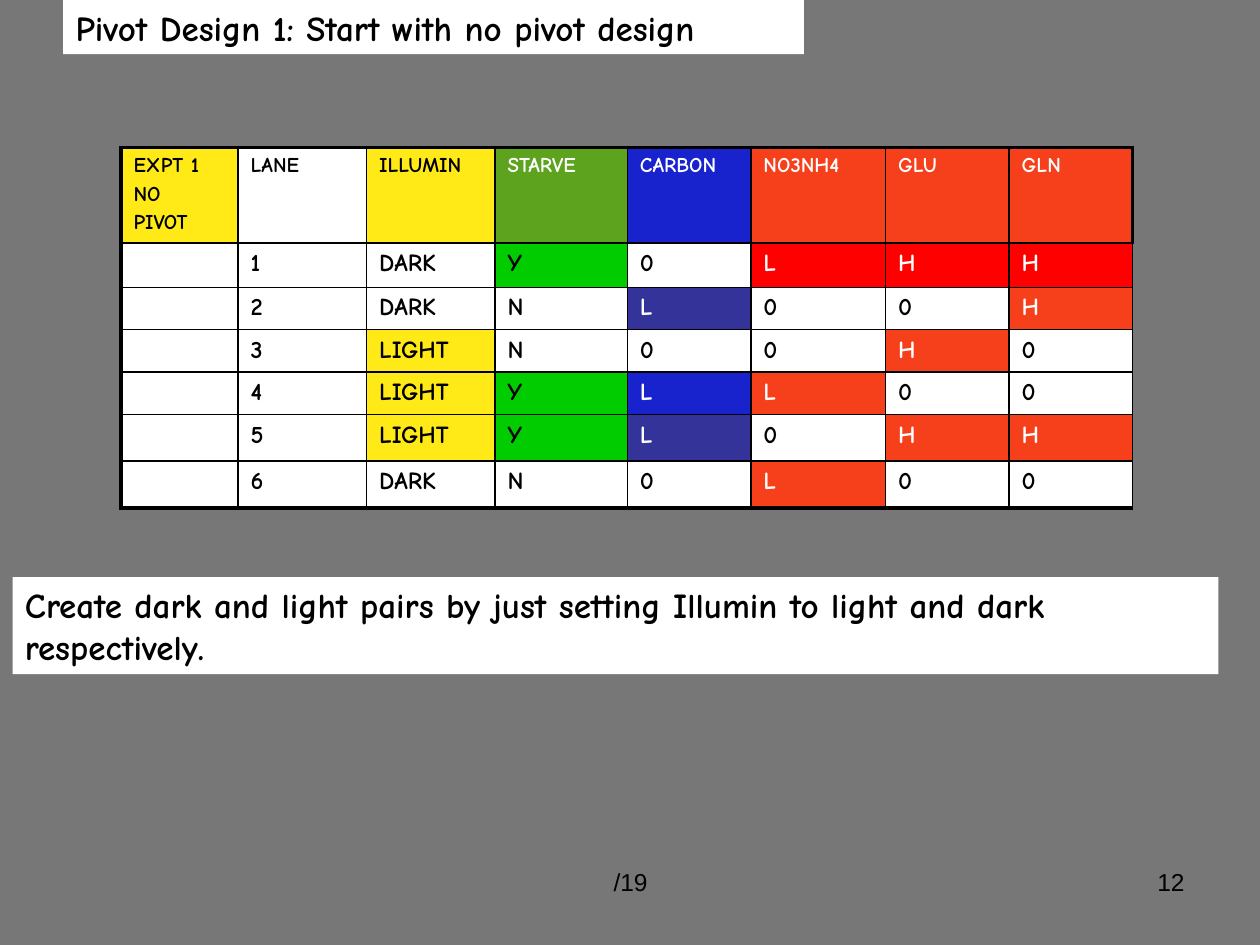
from lxml.etree import SubElement
from pptx import Presentation
from pptx.dml.color import RGBColor
from pptx.enum.text import MSO_ANCHOR, PP_ALIGN
from pptx.oxml.ns import qn
from pptx.util import Inches, Pt

BLACK = RGBColor(0x00, 0x00, 0x00)
WHITE = RGBColor(0xFF, 0xFF, 0xFF)
GREY = RGBColor(0x77, 0x77, 0x77)
YELLOW = RGBColor(0xFF, 0xEA, 0x18)
OLIVE = RGBColor(0x5D, 0xA3, 0x1E)
GREEN = RGBColor(0x00, 0xCC, 0x00)
BLUE = RGBColor(0x18, 0x22, 0xCD)
INDIGO = RGBColor(0x33, 0x33, 0x99)
ORANGE = RGBColor(0xF6, 0x3F, 0x1B)
RED = RGBColor(0xFF, 0x00, 0x00)

FILLS = {"W": WHITE, "Y": YELLOW, "O": OLIVE, "G": GREEN,
         "B": BLUE, "I": INDIGO, "F": ORANGE, "R": RED}
LIGHT_TEXT_FILLS = "OBIFR"


def write(frame, text, size, color, font="Comic Neue", bold=True, align=PP_ALIGN.LEFT):
    frame.text = text
    for para in frame.paragraphs:
        para.alignment = align
        for span in para.runs:
            span.font.name = font
            span.font.size = Pt(size)
            span.font.bold = bold
            span.font.color.rgb = color


def add_border(cell, side, width):
    """Draw one black cell edge; side is L, R, T or B, in that order."""
    line = SubElement(cell._tc.get_or_add_tcPr(), qn(f"a:ln{side}"), w=str(Pt(width)))
    fill = SubElement(line, qn("a:solidFill"))
    SubElement(fill, qn("a:srgbClr"), val=str(BLACK))


deck = Presentation()
deck.slide_width = Inches(10)
deck.slide_height = Inches(7.5)
slide = deck.slides.add_slide(deck.slide_layouts[5])
slide.background.fill.solid()
slide.background.fill.fore_color.rgb = GREY

# Experiment table: texts and fill codes, row by row
ROWS = [
    (["EXPT 1\nNO\nPIVOT", "LANE", "ILLUMIN", "STARVE", "CARBON", "NO3NH4", "GLU", "GLN"],
     "YWYOBFFF"),
    (["", "1", "DARK", "Y", "0", "L", "H", "H"], "WWWGWRRR"),
    (["", "2", "DARK", "N", "L", "0", "0", "H"], "WWWWIWWF"),
    (["", "3", "LIGHT", "N", "0", "0", "H", "0"], "WWYWWWFW"),
    (["", "4", "LIGHT", "Y", "L", "L", "0", "0"], "WWYGBFWW"),
    (["", "5", "LIGHT", "Y", "L", "0", "H", "H"], "WWYGIWFF"),
    (["", "6", "DARK", "N", "0", "L", "0", "0"], "WWWWWFWW"),
]
WIDTHS = [0.93, 1.02, 1.02, 1.05, 0.98, 1.07, 0.98, 0.98]
HEIGHTS = [0.76, 0.35, 0.33, 0.33, 0.33, 0.37, 0.37]

table = slide.shapes.add_table(
    len(ROWS), len(WIDTHS), Inches(0.96), Inches(1.17),
    Inches(sum(WIDTHS)), Inches(sum(HEIGHTS))).table
table.first_row = False
table.horz_banding = False
for column, width in zip(table.columns, WIDTHS):
    column.width = Inches(width)
for row, height in zip(table.rows, HEIGHTS):
    row.height = Inches(height)

last_row, last_column = len(ROWS) - 1, len(WIDTHS) - 1
for r, (texts, codes) in enumerate(ROWS):
    size = 12 if r == 0 else 14
    for c, (text, code) in enumerate(zip(texts, codes)):
        cell = table.cell(r, c)
        write(cell.text_frame, text, size, WHITE if code in LIGHT_TEXT_FILLS else BLACK)
        for para in cell.text_frame.paragraphs:
            para.space_before = Pt(size * 0.2)
            if not text:
                SubElement(para._p, qn("a:endParaRPr"), sz=str(size * 100))
        thick_edges = {"L": c == 0, "R": r == 0 and c == last_column,
                       "T": r == 0, "B": r == last_row}
        for side, thick in thick_edges.items():
            add_border(cell, side, 2.25 if thick else 1)
        cell.fill.solid()
        cell.fill.fore_color.rgb = FILLS[code]

# White panels: the title and the note below the table
title = slide.shapes.title
note = slide.shapes.add_textbox(0, 0, 0, 0)
PANELS = [
    (title, (0.5, 0, 5.88, 0.43), "Pivot Design 1: Start with no pivot design"),
    (note, (0.1, 4.58, 9.57, 0.77),
     "Create dark and light pairs by just setting Illumin to light and dark respectively."),
]
for panel, place, text in PANELS:
    panel.left, panel.top, panel.width, panel.height = map(Inches, place)
    panel.fill.solid()
    panel.fill.fore_color.rgb = WHITE
    panel.text_frame.word_wrap = True
    panel.text_frame.vertical_anchor = MSO_ANCHOR.TOP
    write(panel.text_frame, text, 20, BLACK)

# Footer
FOOTERS = [("/19", 3.42, 3.17, PP_ALIGN.CENTER), ("12", 7.17, 2.33, PP_ALIGN.RIGHT)]
for text, left, width, align in FOOTERS:
    box = slide.shapes.add_textbox(Inches(left), Inches(6.83), Inches(width), Inches(0.52))
    box.text_frame.word_wrap = True
    write(box.text_frame, text, 14, BLACK, "Arial", False, align)

deck.save("out.pptx")
